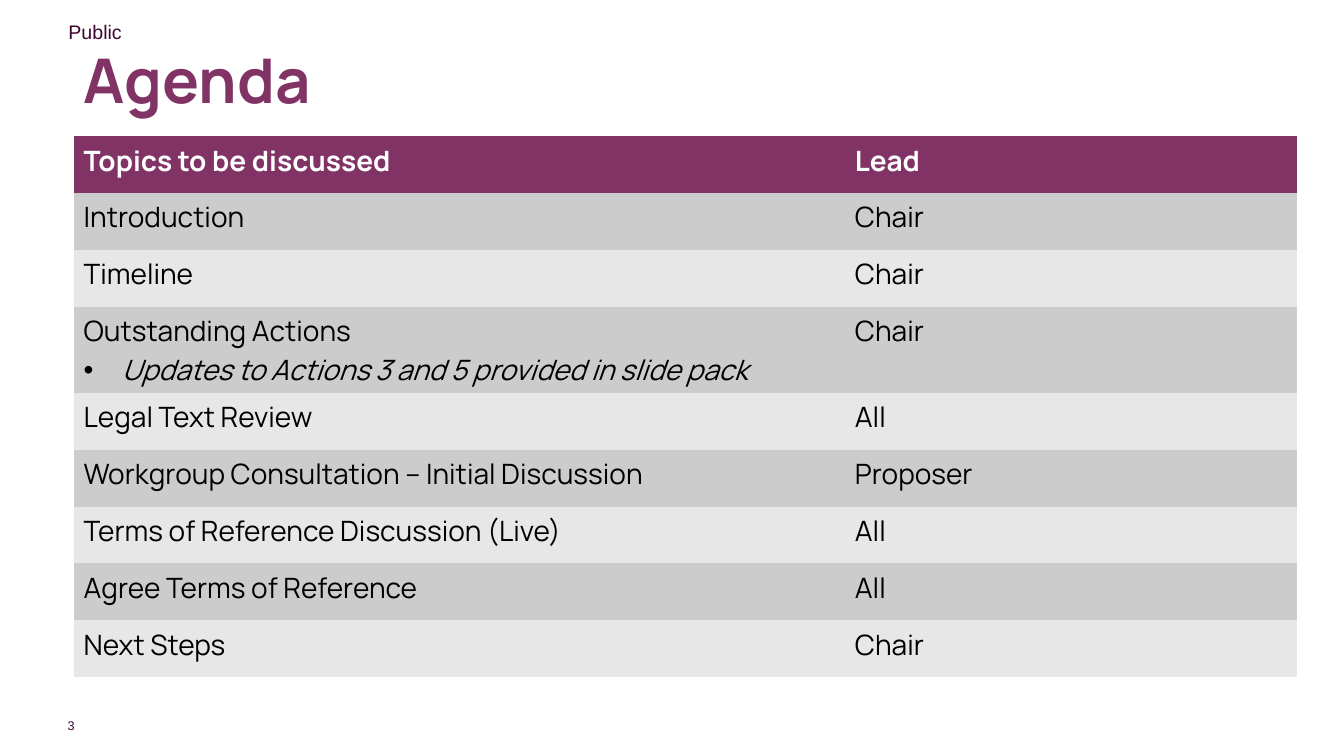
from dataclasses import dataclass

from lxml.etree import SubElement
from pptx import Presentation
from pptx.dml.color import RGBColor
from pptx.enum.text import MSO_ANCHOR, PP_ALIGN
from pptx.oxml.ns import qn
from pptx.slide import Slide
from pptx.table import _Cell
from pptx.text.text import _Paragraph
from pptx.util import Inches, Pt


@dataclass(frozen=True)
class Theme:
    heading_font: str = "Manrope"
    label_font: str = "Arial"
    plum: str = "813366"
    dark_plum: str = "3F0730"
    white: str = "FFFFFF"
    black: str = "000000"
    bands: tuple[str, str] = ("CCCCCC", "E7E7E7")
    title_size: int = 44
    table_size: int = 20
    label_size: int = 14
    number_size: int = 9
    plain_table_style: str = "{2D5ABB26-0587-4C30-8999-92F81FD0307C}"


@dataclass(frozen=True)
class TextStyle:
    font: str
    size: int
    color: str
    bold: bool = False
    italic: bool = False


@dataclass(frozen=True)
class Label:
    text: str
    left: float
    top: float
    width: float
    height: float
    style: TextStyle
    align: PP_ALIGN = PP_ALIGN.LEFT
    anchor: MSO_ANCHOR = MSO_ANCHOR.TOP
    wrap: bool = True
    inset: tuple[float, float] = (0.1, 0.05)
    line_spacing: float = 1.0


@dataclass(frozen=True)
class AgendaItem:
    topic: str
    lead: str
    note: str = ""


THEME = Theme()
HEADER_STYLE = TextStyle(THEME.heading_font, THEME.table_size, THEME.white, bold=True)
BODY_STYLE = TextStyle(THEME.heading_font, THEME.table_size, THEME.black)
NOTE_STYLE = TextStyle(THEME.heading_font, THEME.table_size, THEME.black, italic=True)

LABELS = (
    Label("3", 0.59, 7.12, 0.15, 0.15,
          TextStyle(THEME.label_font, THEME.number_size, THEME.dark_plum),
          align=PP_ALIGN.RIGHT, anchor=MSO_ANCHOR.MIDDLE, wrap=False, inset=(0, 0)),
    Label("Public", 0.58, 0.15, 5, 0.34,
          TextStyle(THEME.label_font, THEME.label_size, THEME.dark_plum)),
    Label("Agenda", 0.73, 0.35, 10.62, 0.95,
          TextStyle(THEME.heading_font, THEME.title_size, THEME.plum, bold=True),
          anchor=MSO_ANCHOR.MIDDLE, line_spacing=0.9),
)

HEADER = AgendaItem("Topics to be discussed", "Lead")
ITEMS = (
    AgendaItem("Introduction", "Chair"),
    AgendaItem("Timeline", "Chair"),
    AgendaItem("Outstanding Actions", "Chair",
               "Updates to Actions 3 and 5 provided in slide pack"),
    AgendaItem("Legal Text Review", "All"),
    AgendaItem("Workgroup Consultation – Initial Discussion", "Proposer"),
    AgendaItem("Terms of Reference Discussion (Live)", "All"),
    AgendaItem("Agree Terms of Reference", "All"),
    AgendaItem("Next Steps", "Chair"),
)
COLUMN_WIDTHS = (7.65, 4.48)
ROW_HEIGHT = 4.52 / 8
NOTE_ROW_HEIGHT = 0.85
NOTE_INDENT = 0.38


def add_span(para: _Paragraph, text: str, style: TextStyle) -> None:
    span = para.add_run()
    span.text = text
    span.font.name = style.font
    span.font.size = Pt(style.size)
    span.font.bold = style.bold
    span.font.italic = style.italic
    span.font.color.rgb = RGBColor.from_string(style.color)


def add_label(page: Slide, label: Label) -> None:
    box = page.shapes.add_textbox(
        Inches(label.left), Inches(label.top), Inches(label.width), Inches(label.height))
    frame = box.text_frame
    frame.word_wrap = label.wrap
    frame.vertical_anchor = label.anchor
    frame.margin_left = frame.margin_right = Inches(label.inset[0])
    frame.margin_top = frame.margin_bottom = Inches(label.inset[1])
    para = frame.paragraphs[0]
    para.alignment = label.align
    para.line_spacing = label.line_spacing
    add_span(para, label.text, label.style)


def add_bullet(para: _Paragraph) -> None:
    properties = para._p.get_or_add_pPr()
    properties.set("marL", str(Inches(NOTE_INDENT)))
    properties.set("indent", str(-Inches(NOTE_INDENT)))
    SubElement(properties, qn("a:buFont"), typeface=THEME.label_font)
    SubElement(properties, qn("a:buChar"), char="•")


def fill_cell(cell: _Cell, text: str, style: TextStyle, color: str) -> None:
    cell.fill.solid()
    cell.fill.fore_color.rgb = RGBColor.from_string(color)
    add_span(cell.text_frame.paragraphs[0], text, style)


def add_agenda(page: Slide) -> None:
    items = (HEADER, *ITEMS)
    heights = [NOTE_ROW_HEIGHT if item.note else ROW_HEIGHT for item in items]
    table = page.shapes.add_table(
        len(items), len(COLUMN_WIDTHS), Inches(0.73), Inches(1.35),
        Inches(sum(COLUMN_WIDTHS)), Inches(sum(heights))).table
    table._tbl.tblPr.find(qn("a:tableStyleId")).text = THEME.plain_table_style
    for column, width in zip(table.columns, COLUMN_WIDTHS):
        column.width = Inches(width)
    for index, (item, height) in enumerate(zip(items, heights)):
        table.rows[index].height = Inches(height)
        style = BODY_STYLE if index else HEADER_STYLE
        color = THEME.bands[(index - 1) % 2] if index else THEME.plum
        for column, text in enumerate((item.topic, item.lead)):
            fill_cell(table.cell(index, column), text, style, color)
        if item.note:
            para = table.cell(index, 0).text_frame.add_paragraph()
            add_bullet(para)
            add_span(para, item.note, NOTE_STYLE)


def main() -> None:
    deck = Presentation()
    deck.slide_width = Inches(13.33)
    deck.slide_height = Inches(7.5)
    page = deck.slides.add_slide(deck.slide_layouts[6])
    for label in LABELS:
        add_label(page, label)
    add_agenda(page)
    deck.save("out.pptx")


if __name__ == "__main__":
    main()
